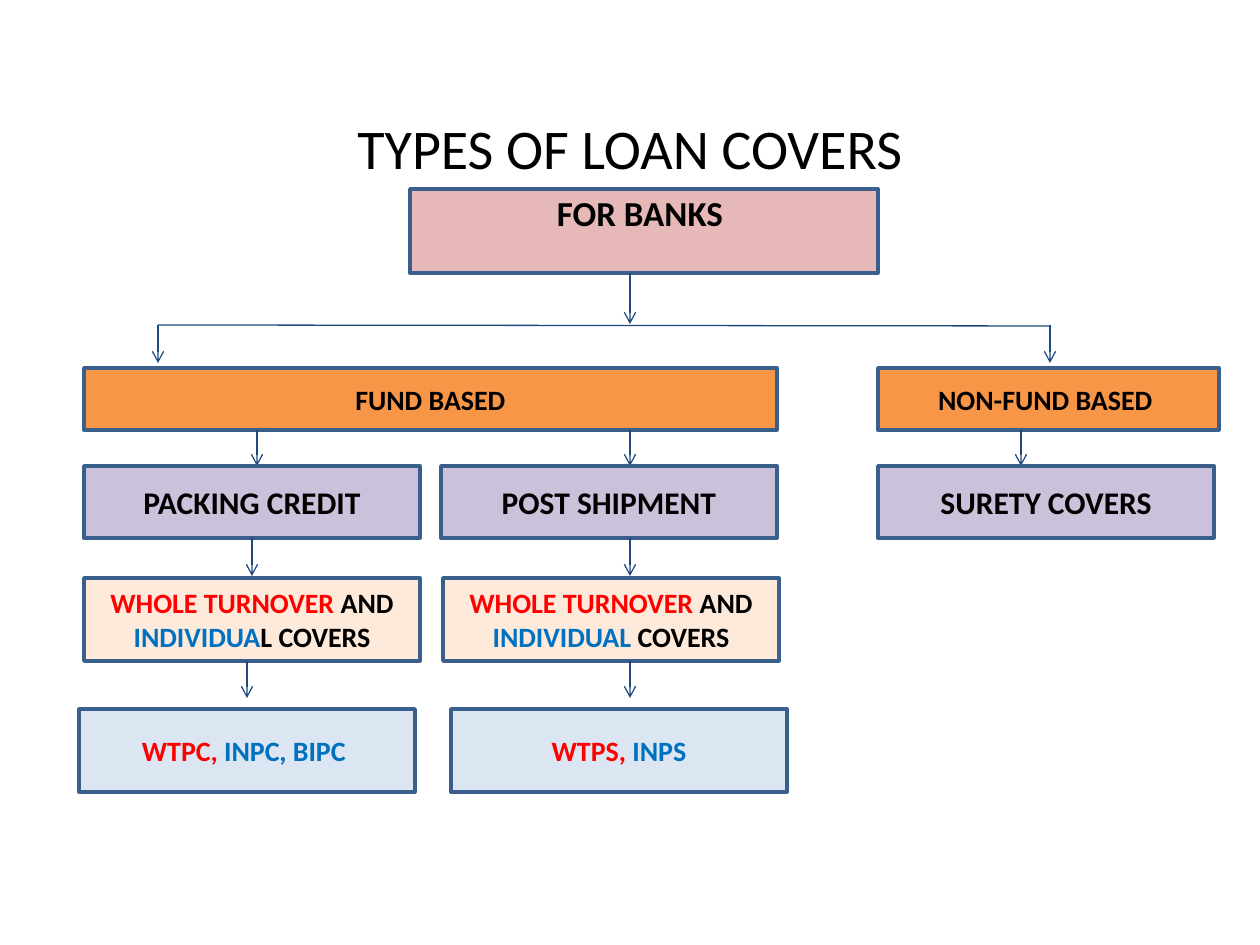
from dataclasses import dataclass
from lxml import etree
from pptx import Presentation
from pptx import util as u
from pptx.dml.color import RGBColor
from pptx.enum import shapes, text
from pptx.oxml.ns import qn

PX = 914400 // 126


@dataclass(frozen=True)
class Theme:
    font: str = "Calibri"
    black: str = "000000"
    red: str = "FF0000"
    blue: str = "0070C0"
    border: str = "3A5F8C"
    arrow: str = "1F497D"
    root: str = "E6B9B8"
    branch: str = "F79646"
    kind: str = "CCC1DA"
    cover: str = "FDEADA"
    code: str = "DCE6F2"
    title_size: int = 32
    root_size: int = 20
    kind_size: int = 18
    body_size: int = 16


T = Theme()
KIND = (0, 36, 36, 72, T.kind, T.kind_size)
COVER = (108, 38, 148, 83, T.cover, T.body_size)
CODE = (231, 37, 279, 83, T.code, T.body_size)
LEVELS = (KIND, COVER, CODE)


def px(*values):
    return [u.Emu(v * PX) for v in values]


def write(tf, runs, size, bold=True):
    tf.word_wrap = True
    p = tf.paragraphs[0]
    p.alignment = text.PP_ALIGN.CENTER
    for words, color in runs:
        r = p.add_run()
        r.text = words
        r.font.name = T.font
        r.font.size = u.Pt(size)
        r.font.bold = bold
        r.font.color.rgb = RGBColor.from_string(color)


def add_box(s, box, fill, runs, size):
    sp = s.shapes.add_shape(shapes.MSO_SHAPE.RECTANGLE, *px(*box))
    sp.shadow.inherit = False
    sp.fill.solid()
    sp.fill.fore_color.rgb = RGBColor.from_string(fill)
    sp.line.color.rgb = RGBColor.from_string(T.border)
    sp.line.width = u.Pt(2)
    sp.text_frame.vertical_anchor = text.MSO_ANCHOR.MIDDLE
    write(sp.text_frame, runs, size)
    return sp


def add_line(s, x1, y1, x2, y2, head=True):
    c = s.shapes.add_connector(shapes.MSO_CONNECTOR.STRAIGHT, *px(x1, y1, x2, y2))
    c.line.color.rgb = RGBColor.from_string(T.arrow)
    c.line.width = u.Pt(0.75)
    if head:
        etree.SubElement(c.line._get_or_add_ln(), qn("a:tailEnd"), type="arrow")
    etree.SubElement(c._element.spPr, qn("a:effectLst"))


def add_title(s, box, words):
    sp = s.shapes.title
    sp.left, sp.top, sp.width, sp.height = px(*box)
    sp.text_frame.vertical_anchor = text.MSO_ANCHOR.MIDDLE
    write(sp.text_frame, [(words, T.black)], T.title_size, bold=False)


def add_root(s, box, words, stem):
    sp = add_box(s, box, T.root, [(words, T.black)], T.root_size)
    sp.text_frame.vertical_anchor = text.MSO_ANCHOR.TOP
    sp.text_frame.margin_top = u.Emu(2 * PX)
    x, y, w, h = box
    add_line(s, x + stem, y + h, x + stem, y + h + 51)


def add_fork(s, box):
    x, y, w, h = box
    add_line(s, x, y, x + w, y + 1, head=False)
    for end in (x, x + w):
        add_line(s, end, y, end, y + h)


def add_branch(s, box, words):
    add_box(s, box, T.branch, [(words, T.black)], T.body_size)


def add_column(s, box, steps):
    x, y, w, _ = box
    for (start, length, top, height, fill, size), (stem, shift, runs) in zip(LEVELS, steps):
        add_line(s, x + stem, y + start, x + stem, y + start + length)
        add_box(s, (x + shift, y + top, w, height), fill, runs, size)


def covers(individual, rest):
    return [("WHOLE TURNOVER", T.red), (" AND ", T.black),
            (individual, T.blue), (rest, T.black)]


def main():
    prs = Presentation()
    prs.slide_width, prs.slide_height = u.Inches(10), u.Inches(7.5)
    s = prs.slides.add_slide(prs.slide_layouts[5])
    add_title(s, (63, 106, 1134, 83), "TYPES OF LOAN COVERS")
    add_root(s, (410, 189, 468, 84), "FOR BANKS ", 220)
    add_fork(s, (158, 325, 892, 38))
    add_branch(s, (84, 368, 693, 62), "FUND BASED")
    add_branch(s, (878, 368, 341, 62), "NON-FUND BASED ")
    add_column(s, (84, 430, 336, 362), [
        (173, 0, [("PACKING CREDIT", T.black)]),
        (168, 0, covers("INDIVIDUA", "L COVERS")),
        (163, -5, [("WTPC, ", T.red), ("INPC, BIPC ", T.blue)]),
    ])
    add_column(s, (441, 430, 336, 362), [
        (189, 0, [("POST SHIPMENT", T.black)]),
        (189, 2, covers("INDIVIDUAL", " COVERS")),
        (189, 10, [("WTPS, ", T.red), ("INPS", T.blue)]),
    ])
    add_column(s, (878, 430, 336, 108), [
        (143, 0, [("SURETY COVERS", T.black)]),
    ])
    prs.save("out.pptx")


if __name__ == "__main__":
    main()
